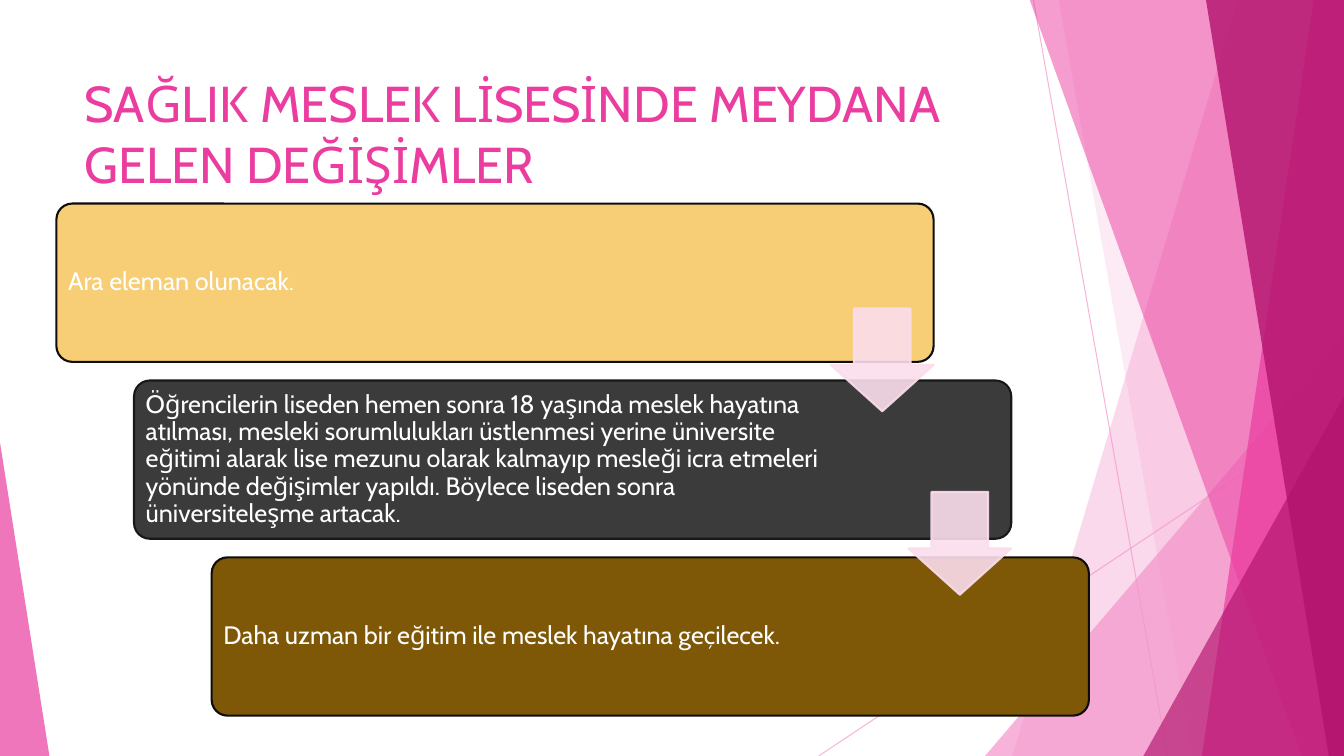
"""Build a slide with three stepped cards about changes in vocational health schools."""
from lxml import etree
from pptx import Presentation
from pptx.dml.color import RGBColor
from pptx.enum.shapes import MSO_CONNECTOR as Connector, MSO_SHAPE as Shape
from pptx.enum.text import MSO_ANCHOR as Anchor
from pptx.oxml.ns import qn
from pptx.util import Inches, Pt

TITLE = "SAĞLIK MESLEK LİSESİNDE MEYDANA GELEN DEĞİŞİMLER"
STEPS = [
    ("Ara eleman olunacak.", "F7CD75", "0D0D0D", 7.01),
    ("Öğrencilerin liseden hemen sonra 18 yaşında meslek hayatına atılması, "
     "mesleki sorumlulukları üstlenmesi yerine üniversite eğitimi alarak lise "
     "mezunu olarak kalmayıp mesleği icra etmeleri yönünde değişimler yapıldı. "
     "Böylece liseden sonra üniversiteleşme artacak.", "3B3B3B", "181818", 6.82),
    ("Daha uzman bir eğitim ile meslek hayatına geçilecek.", "7E5807", "0D0D0D", 6.82),
]
THEME = {
    "font": "Cabin", "title_size": 36, "body_size": 18,
    "light": "F496CB", "pink": "EB3D9F", "deep": "B2136D",
    "arrow": "FBDDEC", "text": "FFFFFF",
}
WIDTH, HEIGHT, TOP = 13.33, 7.5, -0.01
RAYS = [((10.25, 0), (11.58, HEIGHT)), ((WIDTH, 4.03), (8.12, HEIGHT))]
BANDS_BACK = [(12.28, 10.04, "light", 36), (10.5, 11.83, "light", 20)]
BANDS_FRONT = [(10.21, 12.91, "pink", 50), (13.03, 11.92, "pink", 70),
               (11.96, 13.18, "deep", 80)]
WEDGE_BACK = (9.77, 3.33, 3.56, 1, "light", 72)
WEDGES_FRONT = [(11.34, 3.93, 1.99, 1, "deep", 66), (0, 4.39, 0.49, 0, "pink", 70)]

CARD_LEFT, CARD_TOP, CARD_W, CARD_H = 0.56, 2.02, 8.7, 1.57
STEP_X, STEP_Y = 0.77, 1.755
TEXT_INSET, TEXT_MARGIN = 0.045, 0.07
ARROW_SIZE, ARROW_DROP = 1.02, 1.04


def set_alpha(fill, percent):
    """Make a solid fill partly transparent."""
    color = fill._xPr.find(qn("a:solidFill"))[0]
    etree.SubElement(color, qn("a:alpha")).set("val", str(percent * 1000))


def paint(shape, fill, alpha=100, line=None):
    """Give a shape its fill and outline, without shadow."""
    shape.shadow.inherit = False
    shape.fill.solid()
    shape.fill.fore_color.rgb = RGBColor.from_string(fill)
    if alpha < 100:
        set_alpha(shape.fill, alpha)
    if line is None:
        shape.line.fill.background()
        return
    shape.line.width = Pt(1.5)
    shape.line.color.rgb = RGBColor.from_string(line)
    if alpha < 100:
        set_alpha(shape.line.fill, alpha)


def add_preset(shapes, kind, box, adjustments):
    """Add a preset shape with its adjustments."""
    preset = shapes.add_shape(kind, *map(Inches, box))
    for index, value in enumerate(adjustments):
        preset.adjustments[index] = value
    return preset


def add_ray(shapes, start, end):
    """Add a thin background line."""
    ray = shapes.add_connector(Connector.STRAIGHT, *map(Inches, start + end))
    ray.line.width = Pt(0.75)
    ray.line.color.rgb = RGBColor.from_string(THEME["light"])
    set_alpha(ray.line.fill, 70)
    etree.SubElement(ray._element.spPr, qn("a:effectLst"))


def add_band(shapes, top_x, bottom_x, color, alpha):
    """Add a slanted band that reaches the right edge."""
    corners = [(WIDTH, TOP), (WIDTH, HEIGHT), (bottom_x, HEIGHT)]
    builder = shapes.build_freeform(Inches(top_x), Inches(TOP))
    builder.add_line_segments([(Inches(x), Inches(y)) for x, y in corners], close=True)
    paint(builder.convert_to_shape(), THEME[color], alpha)


def add_wedge(shapes, left, top, width, apex, color, alpha):
    """Add a triangle that stands on the bottom edge."""
    wedge = add_preset(shapes, Shape.ISOSCELES_TRIANGLE,
                       (left, top, width, HEIGHT - top), [apex])
    paint(wedge, THEME[color], alpha)


def add_text(shapes, box, words, size, color, anchor):
    """Add a wrapped text box and return its frame."""
    frame = shapes.add_textbox(*map(Inches, box)).text_frame
    frame.word_wrap = True
    frame.vertical_anchor = anchor
    paragraph = frame.paragraphs[0]
    paragraph.text = words
    paragraph.font.name = THEME["font"]
    paragraph.font.size = Pt(size)
    paragraph.font.color.rgb = RGBColor.from_string(THEME[color])
    return frame


def add_card(shapes, index, words, fill, line, text_width):
    """Add one card with its text."""
    left, top = CARD_LEFT + index * STEP_X, CARD_TOP + index * STEP_Y
    card = add_preset(shapes, Shape.ROUNDED_RECTANGLE, (left, top, CARD_W, CARD_H), [0.1])
    paint(card, fill, line=line)
    box = (left + TEXT_INSET, top + TEXT_INSET, text_width, CARD_H - 2 * TEXT_INSET)
    frame = add_text(shapes, box, words, THEME["body_size"], "text", Anchor.MIDDLE)
    frame.margin_left = frame.margin_right = Inches(TEXT_MARGIN)
    frame.margin_top = frame.margin_bottom = Inches(TEXT_MARGIN)
    frame.paragraphs[0].line_spacing = 0.9


def add_arrow(shapes, index):
    """Add the arrow from one card to the next."""
    left = CARD_LEFT + index * STEP_X + CARD_W - ARROW_SIZE
    top = CARD_TOP + ARROW_DROP + index * 1.82
    arrow = add_preset(shapes, Shape.DOWN_ARROW, (left, top, ARROW_SIZE, ARROW_SIZE),
                       [0.55, 0.45])
    paint(arrow, THEME["arrow"], 90, THEME["arrow"])


def main():
    """Assemble and save the slide."""
    deck = Presentation()
    deck.slide_width, deck.slide_height = Inches(WIDTH), Inches(HEIGHT)
    shapes = deck.slides.add_slide(deck.slide_layouts[6]).shapes
    for ray in RAYS:
        add_ray(shapes, *ray)
    for band in BANDS_BACK:
        add_band(shapes, *band)
    add_wedge(shapes, *WEDGE_BACK)
    for band in BANDS_FRONT:
        add_band(shapes, *band)
    for wedge in WEDGES_FRONT:
        add_wedge(shapes, *wedge)
    add_text(shapes, (0.74, 0.67, 9.4, 1.44), TITLE, THEME["title_size"], "pink", Anchor.TOP)
    for index, step in enumerate(STEPS):
        add_card(shapes, index, *step)
    for index in range(len(STEPS) - 1):
        add_arrow(shapes, index)
    deck.save("out.pptx")


if __name__ == "__main__":
    main()
